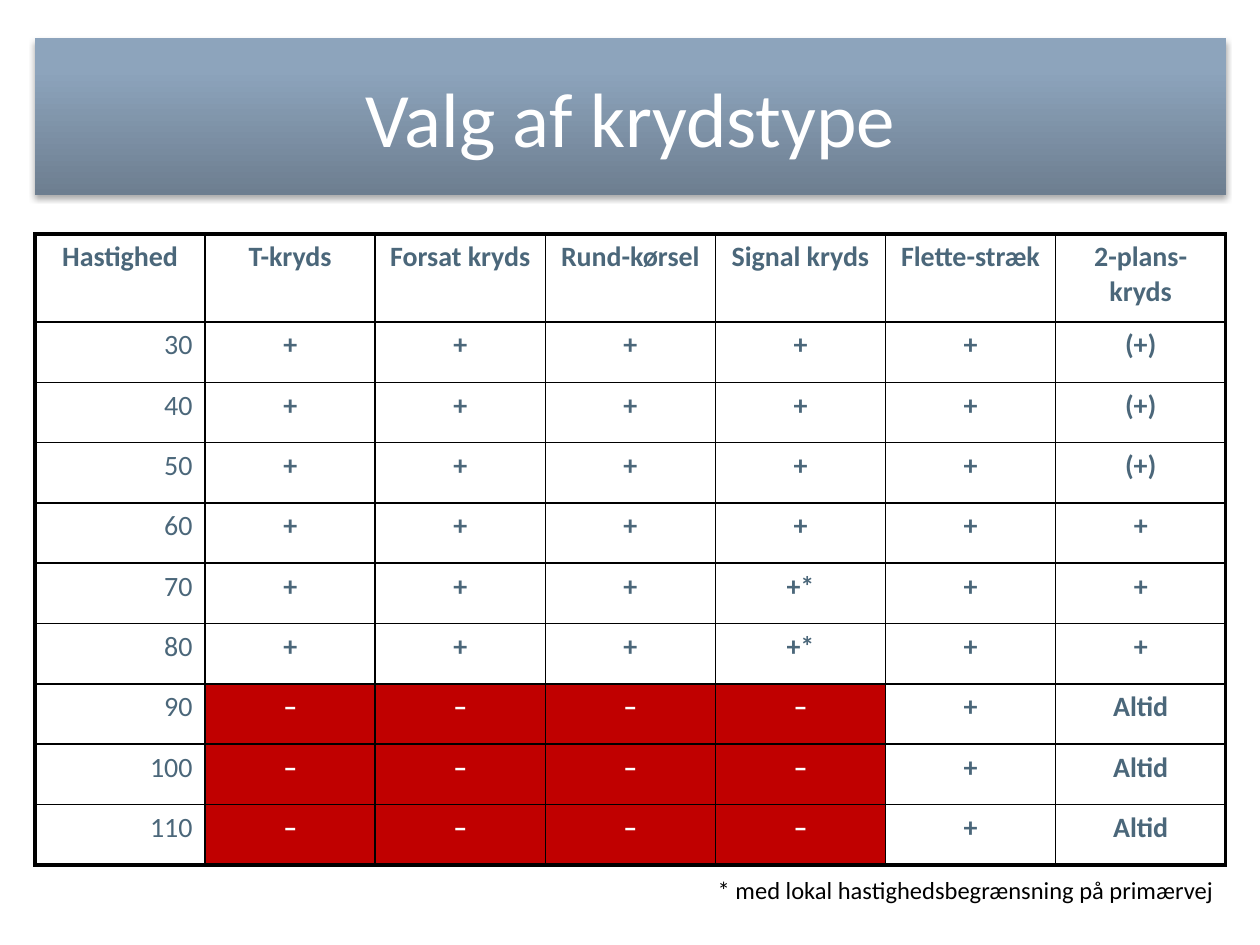
from pptx import Presentation
from pptx.dml.color import RGBColor
from pptx.enum.shapes import MSO_SHAPE as Shape
from pptx.enum.text import MSO_ANCHOR as Anchor, PP_ALIGN as Align
from pptx.oxml import parse_xml
from pptx.oxml.ns import nsdecls
from pptx.util import Pt

TITLE = "Valg af krydstype"
NOTE = "* med lokal hastighedsbegrænsning på primærvej"
HEAD = ["Hastighed", "T-kryds", "Forsat kryds", "Rund-kørsel",
        "Signal kryds", "Flette-stræk", "2-plans- kryds"]
ROWS = [
    ["30", "+", "+", "+", "+", "+", "(+)"],
    ["40", "+", "+", "+", "+", "+", "(+)"],
    ["50", "+", "+", "+", "+", "+", "(+)"],
    ["60", "+", "+", "+", "+", "+", "+"],
    ["70", "+", "+", "+", "+*", "+", "+"],
    ["80", "+", "+", "+", "+*", "+", "+"],
    ["90", "–", "–", "–", "–", "+", "Altid"],
    ["100", "–", "–", "–", "–", "+", "Altid"],
    ["110", "–", "–", "–", "–", "+", "Altid"],
]
STOPS = [(0, "6D7E90"), (80, "8DA4BC"), (100, "8DA4BD")]
INK, RED, WHITE, BLACK = "4B677A", "C00000", "FFFFFF", "000000"
THIN, THICK = 1, 2.25
LEFT, WIDE, TOP, HIGH, HEAD_H = 35, 1191, 234, 631, 88
NS = nsdecls("a")


def px(n):
    return round(n * 914400 / 126)


def rgb(code):
    return RGBColor.from_string(code)


def write(frame, text, size, color, align, bold=False):
    para = frame.paragraphs[0]
    para.text = text
    para.alignment = align
    font = para.font
    font.name, font.size, font.bold = "Calibri", Pt(size), bold
    font.color.rgb = rgb(color)


def add_title(slide):
    box = slide.shapes.add_shape(
        Shape.RECTANGLE, *map(px, (LEFT, 38, WIDE, 157)))
    box.line.fill.background()
    box.shadow.inherit = False
    props = box.fill._xPr
    stops = "".join(f'<a:gs pos="{at * 1000}"><a:srgbClr val="{code}"/></a:gs>'
                    for at, code in STOPS)
    props.insert(2, parse_xml(
        f'<a:gradFill {NS} rotWithShape="1"><a:gsLst>{stops}</a:gsLst>'
        '<a:lin ang="16200000" scaled="0"/></a:gradFill>'))
    props[-1].append(parse_xml(
        f'<a:outerShdw {NS} blurRad="{Pt(3.1)}" dist="{Pt(1.8)}" dir="5400000" '
        f'rotWithShape="0"><a:srgbClr val="{BLACK}"><a:alpha val="35000"/>'
        '</a:srgbClr></a:outerShdw>'))
    box.text_frame.vertical_anchor = Anchor.MIDDLE
    write(box.text_frame, TITLE, 44, WHITE, Align.CENTER)


def edge(cell, outer):
    props = cell._tc.get_or_add_tcPr()
    for i, side in enumerate("LRTB"):
        width = Pt(THICK if outer[side] else THIN)
        props.insert(i, parse_xml(
            f'<a:ln{side} {NS} w="{width}"><a:solidFill><a:srgbClr val="{BLACK}"/>'
            f'</a:solidFill></a:ln{side}>'))


def add_grid(slide):
    data = [HEAD] + ROWS
    last_r, last_c = len(data) - 1, len(HEAD) - 1
    grid = slide.shapes.add_table(
        len(data), len(HEAD), *map(px, (LEFT, TOP, WIDE, HIGH))).table
    for col in grid.columns:
        col.width = px(WIDE / len(HEAD))
    for r, row in enumerate(data):
        grid.rows[r].height = px((HIGH - HEAD_H) / len(ROWS) if r else HEAD_H)
        for c, text in enumerate(row):
            cell = grid.cell(r, c)
            speed, ban = r > 0 and c == 0, text == "–"
            write(cell.text_frame, text, 16, WHITE if ban else INK,
                  Align.RIGHT if speed else Align.CENTER, not speed)
            if ban or r == 0 or c == 0:
                cell.fill.solid()
                cell.fill.fore_color.rgb = rgb(RED if ban else WHITE)
            else:
                cell.fill.background()
            edge(cell, {"L": c == 0, "R": c == last_c,
                        "T": r == 0, "B": r == last_r})


def add_note(slide):
    box = slide.shapes.add_textbox(*map(px, (660, 869, 566, 42)))
    box.text_frame.word_wrap = True
    write(box.text_frame, NOTE, 14, BLACK, Align.RIGHT)


def main():
    deck = Presentation()
    deck.slide_width, deck.slide_height = px(1260), px(945)
    slide = deck.slides.add_slide(deck.slide_layouts[6])
    add_title(slide)
    add_grid(slide)
    add_note(slide)
    deck.save("out.pptx")


if __name__ == "__main__":
    main()
